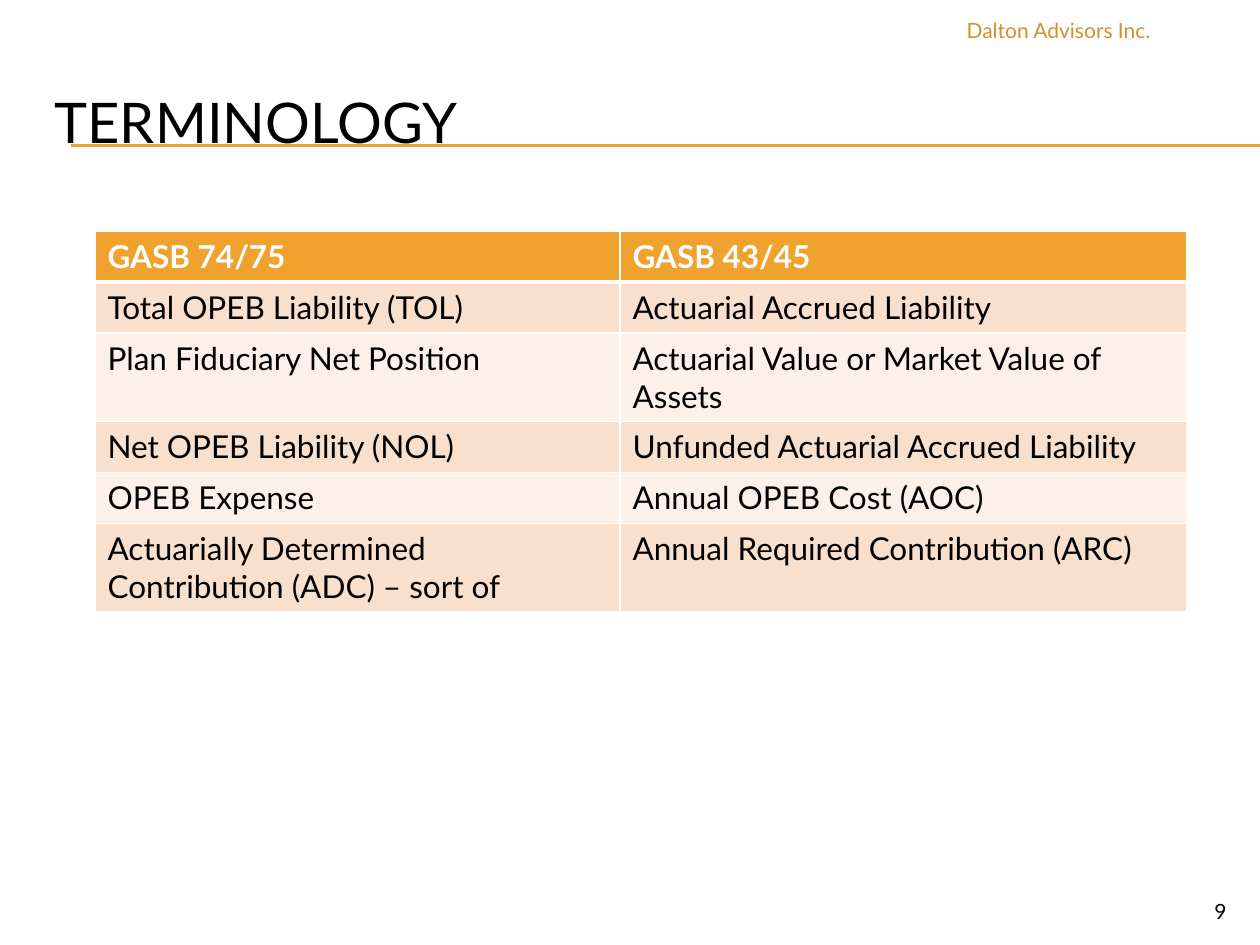
import pptx
import pptx.util
import pptx.dml.color
import pptx.enum.text
import pptx.enum.shapes
import pptx.oxml
import pptx.oxml.ns

TITLE = "TERMINOLOGY"
FIRM = "Dalton Advisors Inc."
PAGE = "9"
ROWS = [
    ("GASB 74/75", "GASB 43/45"),
    ("Total OPEB Liability (TOL)", "Actuarial Accrued Liability"),
    ("Plan Fiduciary Net Position", "Actuarial Value or Market Value of Assets"),
    ("Net OPEB Liability (NOL)", "Unfunded Actuarial Accrued Liability"),
    ("OPEB Expense", "Annual OPEB Cost (AOC)"),
    ("Actuarially Determined Contribution (ADC) – sort of",
     "Annual Required Contribution (ARC)"),
]
WIDTHS = [525, 567]
SINGLE, DOUBLE = 51, 88
TALL = {2, 5}
GOLD, DARK, LIGHT = "F0A22E", "F9E0CD", "FCF0E8"
BLACK, WHITE, BRONZE = "000000", "FFFFFF", "D48F29"
RULES = [145, 146]
LEFT = pptx.enum.text.PP_ALIGN.LEFT
RIGHT = pptx.enum.text.PP_ALIGN.RIGHT
SCALE = 914400 / 126


def px(num):
    return pptx.util.Emu(round(num * SCALE))


def tint(code):
    return pptx.dml.color.RGBColor.from_string(code)


def place(shape, box):
    for name, num in zip(("left", "top", "width", "height"), box):
        setattr(shape, name, px(num))


def write(frame, text, size, color, align=LEFT, bold=False):
    frame.word_wrap = True
    para = frame.paragraphs[0]
    para.alignment = align
    run = para.add_run()
    run.text = text
    form = {"name": "Lato", "size": pptx.util.Pt(size), "bold": bold}
    for key, val in form.items():
        setattr(run.font, key, val)
    run.font.color.rgb = tint(color)


def edge(cell, side, width):
    line = pptx.oxml.parse_xml(
        f'<a:ln{side} {pptx.oxml.ns.nsdecls("a")} w="{pptx.util.Pt(width)}">'
        f'<a:solidFill><a:srgbClr val="{WHITE}"/></a:solidFill></a:ln{side}>')
    cell._tc.get_or_add_tcPr().append(line)


def rule(slide, y):
    kind = pptx.enum.shapes.MSO_CONNECTOR.STRAIGHT
    line = slide.shapes.add_connector(kind, px(71), px(y), px(1260), px(y))
    line.line.color.rgb = tint(GOLD)
    line.line.width = pptx.util.Pt(0.75)
    blank = f'<a:effectLst {pptx.oxml.ns.nsdecls("a")}/>'
    line._element.spPr.append(pptx.oxml.parse_xml(blank))
    tree = slide.shapes._spTree
    tree.remove(line._element)
    tree.insert_element_before(line._element, "p:sp")


def label(slide, box, text, color):
    shape = slide.shapes.add_textbox(*map(px, box))
    write(shape.text_frame, text, 12, color, RIGHT)


def grid(slide):
    highs = [DOUBLE if i in TALL else SINGLE for i in range(len(ROWS))]
    box = (95, 231, sum(WIDTHS), sum(highs))
    frame = slide.shapes.add_table(len(ROWS), len(WIDTHS), *map(px, box))
    table = frame.table
    for col, wide in zip(table.columns, WIDTHS):
        col.width = px(wide)
    for i, (row, high, texts) in enumerate(zip(table.rows, highs, ROWS)):
        row.height = px(high)
        head = i == 0
        fill = GOLD if head else DARK if i % 2 else LIGHT
        for cell, text in zip(row.cells, texts):
            write(cell.text_frame, text, 18, WHITE if head else BLACK, bold=head)
            for side in "LRTB":
                thick = (head and side == "B") or (i == 1 and side == "T")
                edge(cell, side, 3 if thick else 1)
            cell.fill.solid()
            cell.fill.fore_color.rgb = tint(fill)


def main():
    deck = pptx.Presentation()
    deck.slide_width, deck.slide_height = px(1260), px(945)
    slide = deck.slides.add_slide(deck.slide_layouts[5])
    title = slide.shapes.title
    place(title, (42, 63, 1197, 116))
    title.text_frame.vertical_anchor = pptx.enum.text.MSO_ANCHOR.MIDDLE
    write(title.text_frame, TITLE, 32, BLACK)
    for y in RULES:
        rule(slide, y)
    grid(slide)
    label(slide, (1134, 892, 105, 34), PAGE, BLACK)
    label(slide, (764, 11, 399, 40), FIRM, BRONZE)
    deck.save("out.pptx")


if __name__ == "__main__":
    main()
